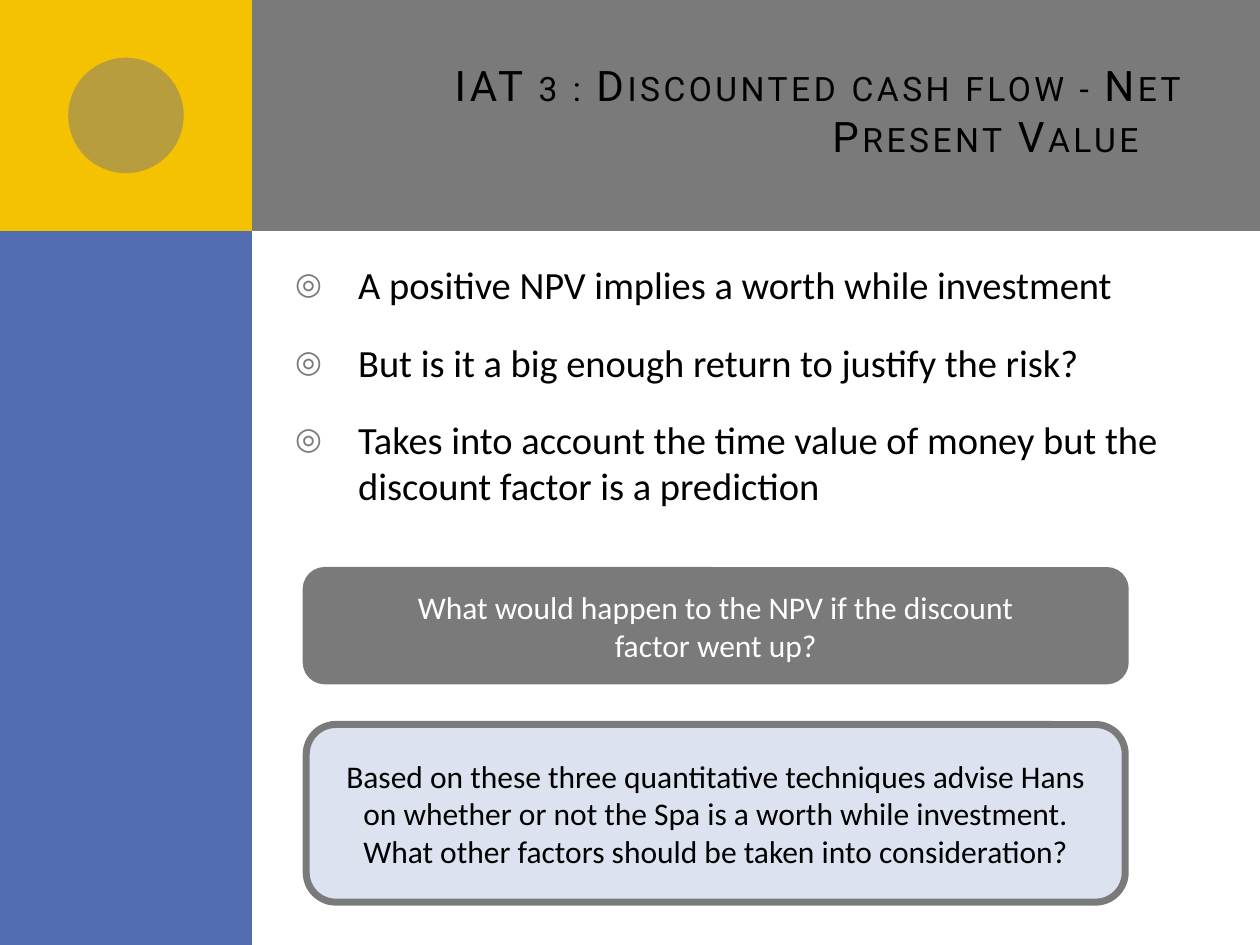
from lxml import etree
from pptx import Presentation
from pptx.dml.color import RGBColor
from pptx.enum import shapes, text
from pptx.oxml import ns
from pptx.util import Pt

GRAY = RGBColor(0x7A, 0x7A, 0x7A)
BLUE = RGBColor(0x52, 0x6D, 0xB0)
GOLD = RGBColor(0xF5, 0xC2, 0x01)
PALE = RGBColor(0xDC, 0xE2, 0xEF)
BLACK = RGBColor(0, 0, 0)
WHITE = RGBColor(255, 255, 255)

TITLE = "IAT 3 : Discounted cash flow - Net Present Value"
POINTS = [
    "A positive NPV implies a worth while investment",
    "But is it a big enough return to justify the risk?",
    "Takes into account the time value of money but the discount factor is a prediction",
]
# top, height, fill, text colour, lines
BOXES = [
    (326, 63, GRAY, WHITE, [
        "What would happen to the NPV if the discount",
        "factor went up?"]),
    (414, 101.5, PALE, BLACK, [
        "Based on these three quantitative techniques advise Hans on whether "
        "or not the Spa is a worth while investment.",
        "What other factors should be taken into consideration?"]),
]
WIDE, HIGH = 720, 540
SIDE, HEAD, DISC = 144, 132, 66
KIND = shapes.MSO_SHAPE
ALIGN = text.PP_ALIGN
MID = text.MSO_ANCHOR.MIDDLE
TOP = text.MSO_ANCHOR.TOP


def add(kind, area, fill):
    shape = slide.shapes.add_shape(kind, *map(Pt, area))
    shape.shadow.inherit = False
    shape.fill.solid()
    shape.fill.fore_color.rgb = fill
    shape.line.fill.background()
    return shape


def place(holder, area):
    holder.left, holder.top, holder.width, holder.height = map(Pt, area)
    tree.append(holder._element)  # bring in front of the bands


def write(shape, lines, anchor, align, **font):
    frame = shape.text_frame
    frame.word_wrap = True
    frame.auto_size = text.MSO_AUTO_SIZE.NONE
    frame.vertical_anchor = anchor
    frame.text = "\n".join(lines)
    color = font.pop("color")
    for para in frame.paragraphs:
        para.alignment = align
        run = para.runs[0]
        run.font.color.rgb = color
        for key, value in font.items():
            setattr(run.font, key, value)
    return frame.paragraphs


def bullet(para):
    para.space_before = Pt(18)
    props = para._p.get_or_add_pPr()
    props.set("marL", str(Pt(36)))
    props.set("indent", str(-Pt(36)))
    tint = etree.SubElement(props, ns.qn("a:buClr"))
    etree.SubElement(tint, ns.qn("a:srgbClr"), val=str(GRAY))
    etree.SubElement(props, ns.qn("a:buSzPct"), val="80000")
    etree.SubElement(props, ns.qn("a:buChar"), char="◎")


deck = Presentation()
deck.slide_width, deck.slide_height = Pt(WIDE), Pt(HIGH)
slide = deck.slides.add_slide(deck.slide_layouts[1])
tree = slide.shapes._spTree
title, body = slide.placeholders

add(KIND.RECTANGLE, (36, 0, WIDE - 36, HEAD), GRAY)
add(KIND.RECTANGLE, (0, 0, SIDE, HIGH), BLUE)
add(KIND.RECTANGLE, (0, 0, SIDE, HEAD), GOLD)
disc = add(KIND.OVAL, ((SIDE - DISC) / 2, (HEAD - DISC) / 2, DISC, DISC), GRAY)
tone = disc._element.spPr.find(".//" + ns.qn("a:srgbClr"))
etree.SubElement(tone, ns.qn("a:alpha"), val="50000")

place(title, (192, 18, 492, 90))
head = write(title, [TITLE], MID, ALIGN.RIGHT,
             name="Roboto", size=Pt(24), color=BLACK)[0]
style = head.runs[0]._r.get_or_add_rPr()
for key, value in {"spc": "200", "cap": "small"}.items():
    style.set(key, value)

place(body, (161.5, 145.5, 516, 164))
for para in write(body, POINTS, TOP, ALIGN.LEFT,
                  name="Calibri", size=Pt(22), color=BLACK):
    bullet(para)

for top, high, fill, ink, lines in BOXES:
    box = add(KIND.ROUNDED_RECTANGLE, (175, top, 468, high), fill)
    box.line.color.rgb = GRAY
    box.line.width = Pt(4)
    write(box, lines, MID, ALIGN.CENTER,
          name="Calibri", size=Pt(18), color=ink)

deck.save("out.pptx")
